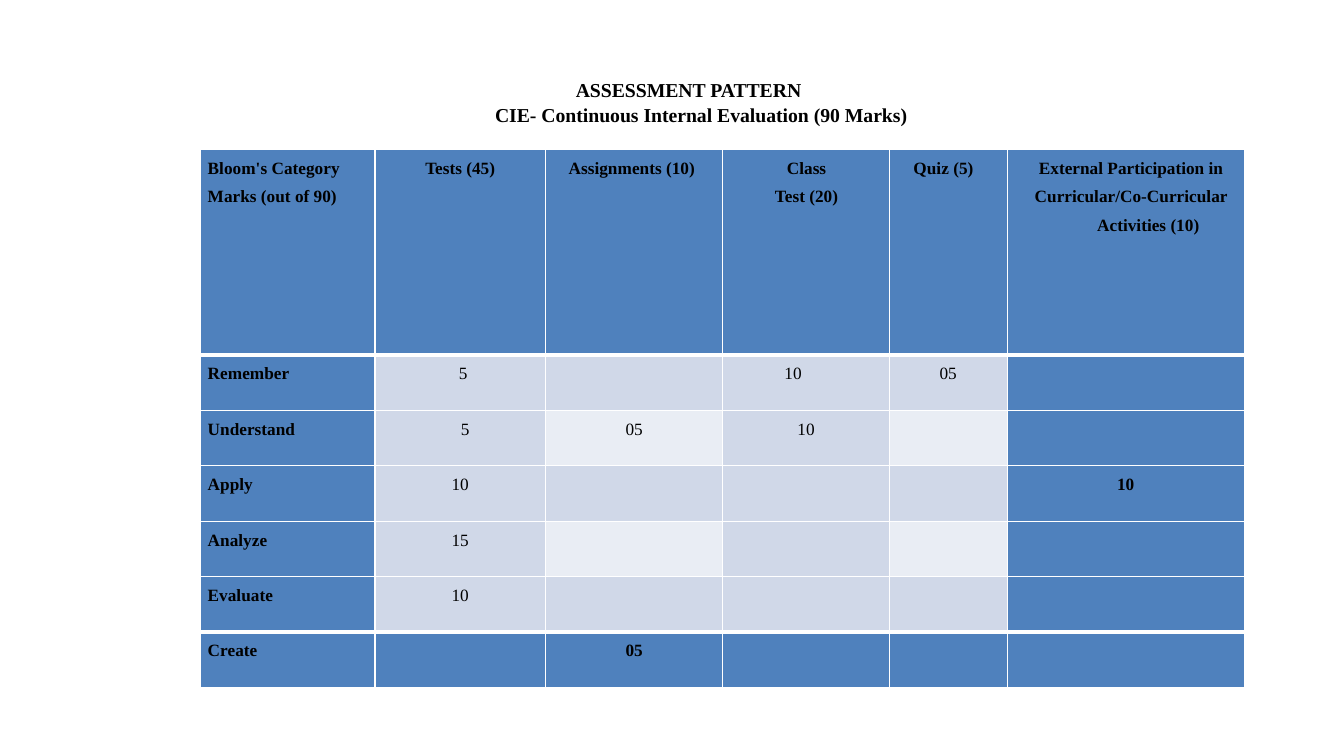
from lxml.etree import SubElement
from pptx import Presentation
from pptx.dml.color import RGBColor
from pptx.enum.text import MSO_ANCHOR, MSO_AUTO_SIZE, PP_ALIGN
from pptx.oxml.ns import qn
from pptx.util import Inches, Pt

# Content
TITLE = ["ASSESSMENT PATTERN", "CIE- Continuous Internal Evaluation (90 Marks)"]
ROWS = [
    ["Bloom's Category Marks (out of 90)", "Tests (45)", "Assignments (10)",
     "Class\nTest (20)", "Quiz (5)",
     "External Participation in\nCurricular/Co-Curricular Activities (10)"],
    ["Remember", "5", "", "10", "05", ""],
    ["Understand", "5", "05", "10", "", ""],
    ["Apply", "10", "", "", "", "10"],
    ["Analyze", "15", "", "", "", ""],
    ["Evaluate", "10", "", "", "", ""],
    ["Create", "", "05", "", "", ""],
]

# Grid and style, lengths in inches
COLUMN_WIDTHS = [1.73, 1.69, 1.76, 1.65, 1.17, 2.35]
ROW_HEIGHTS = [2.04] + [0.55] * 6
TABLE_LEFT, TABLE_TOP = 1.99, 1.48
FONT = "Times New Roman"
BLACK, WHITE = "000000", "FFFFFF"
BLUE, BAND, PALE = "4F81BD", "D0D8E8", "E9EDF4"
LAST_ROW, LAST_COLUMN = len(ROWS) - 1, len(COLUMN_WIDTHS) - 1

# Alignment with left margin, first-line indent and right margin
LEFT, CENTER = PP_ALIGN.LEFT, PP_ALIGN.CENTER
COLUMN_LAYOUT = [
    (LEFT, 0.07, 0, 0), (CENTER, 0.38, 0, 0.38), (CENTER, 0.22, 0, 0.22),
    (CENTER, 0.22, 0, 0.22), (CENTER, 0.23, 0, 0.23), (CENTER, 0.1, 0, 0.1),
]
SPECIAL_LAYOUT = {
    (0, 2): (LEFT, 0.52, -0.29, 0),
    (0, 3): (CENTER, 0.52, -0.29, 0.22),
    (0, 4): (LEFT, 0.37, -0.13, 0),
    (0, 5): (CENTER, 0.45, -0.34, 0),
    (1, 1): (CENTER, 0.06, 0, 0),
    (1, 3): (LEFT, 0.61, 0, 0),
    (2, 1): (CENTER, 0.1, 0, 0),
}


def color(value):
    return RGBColor.from_string(value)


def format_paragraph(paragraph, layout, size, bold, spacing):
    alignment, left, indent, right = layout
    paragraph.alignment = alignment
    paragraph.line_spacing = spacing
    properties = paragraph._p.get_or_add_pPr()
    for name, length in (("marL", left), ("marR", right), ("indent", indent)):
        properties.set(name, str(Inches(length)))
    for run in paragraph.runs:
        run.font.name = FONT
        run.font.size = Pt(size)
        run.font.bold = bold
        run.font.color.rgb = color(BLACK)


def set_borders(cell, top, bottom):
    properties = cell._tc.get_or_add_tcPr()
    for side, width in (("L", 1), ("R", 1), ("T", top), ("B", bottom)):
        line = SubElement(properties, qn("a:ln" + side), w=str(Pt(width)))
        fill = SubElement(line, qn("a:solidFill"))
        SubElement(fill, qn("a:srgbClr"), val=WHITE)


def fill_color(row, column):
    if row in (0, LAST_ROW) or column in (0, LAST_COLUMN):
        return BLUE
    return PALE if row % 2 == 0 and column % 2 == 0 else BAND


def add_title(slide):
    title = slide.shapes.title
    title.left, title.top = Inches(3.14), Inches(0.64)
    title.width, title.height = Inches(7.35), Inches(0.73)
    frame = title.text_frame
    frame.text = "\n".join(TITLE)
    frame.word_wrap = True
    frame.auto_size = MSO_AUTO_SIZE.NONE
    frame.vertical_anchor = MSO_ANCHOR.MIDDLE
    frame.margin_left = frame.margin_right = Inches(0.05)
    frame.margin_top = frame.margin_bottom = Inches(0.02)
    for paragraph, left in zip(frame.paragraphs, (0.03, 0.28)):
        format_paragraph(paragraph, (CENTER, left, 0, 0), 14.1, True, 1.08)


def add_marks_table(slide):
    table = slide.shapes.add_table(
        len(ROWS), len(COLUMN_WIDTHS), Inches(TABLE_LEFT), Inches(TABLE_TOP),
        Inches(sum(COLUMN_WIDTHS)), Inches(sum(ROW_HEIGHTS))).table
    table.first_row = table.horz_banding = False
    for column, width in zip(table.columns, COLUMN_WIDTHS):
        column.width = Inches(width)
    for row, height in zip(table.rows, ROW_HEIGHTS):
        row.height = Inches(height)

    for row, texts in enumerate(ROWS):
        for column, text in enumerate(texts):
            cell = table.cell(row, column)
            cell.margin_left = cell.margin_right = 0
            cell.margin_top = cell.margin_bottom = 0
            # Thick lines set off the header and the last row
            set_borders(cell, 3 if row in (1, LAST_ROW) else 1,
                        3 if row in (0, LAST_ROW - 1) else 1)
            background = fill_color(row, column)
            cell.fill.solid()
            cell.fill.fore_color.rgb = color(background)
            if text:
                cell.text_frame.text = text
                layout = SPECIAL_LAYOUT.get((row, column), COLUMN_LAYOUT[column])
                for paragraph in cell.text_frame.paragraphs:
                    format_paragraph(paragraph, layout, 12.3, background == BLUE, 1.5)


def main():
    presentation = Presentation()
    presentation.slide_width = Inches(13.33)
    presentation.slide_height = Inches(7.5)
    slide = presentation.slides.add_slide(presentation.slide_layouts[5])
    add_title(slide)
    add_marks_table(slide)
    presentation.save("out.pptx")


if __name__ == "__main__":
    main()
